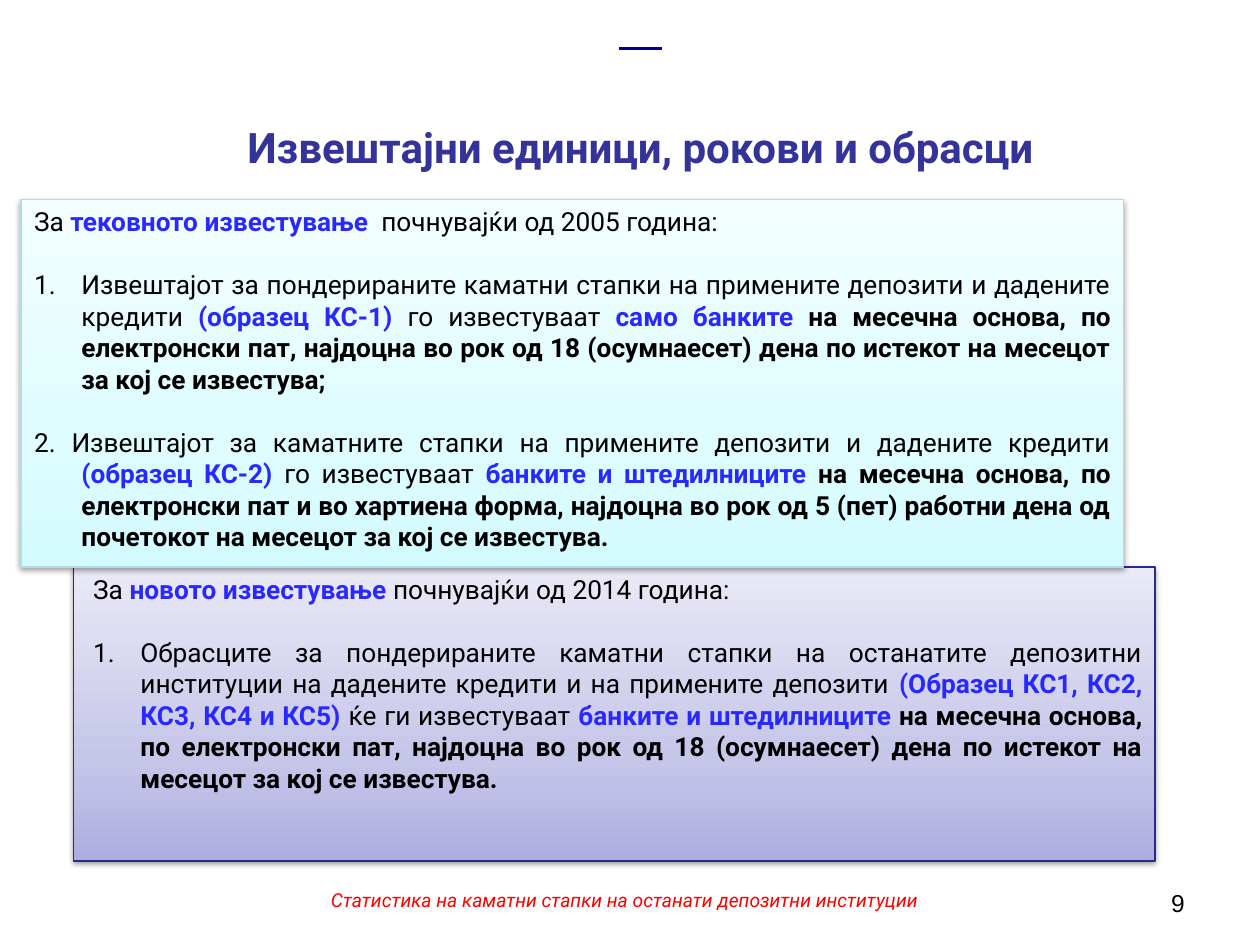
from dataclasses import dataclass
from copy import deepcopy

from lxml import etree
from pptx import Presentation
from pptx.dml.color import RGBColor
from pptx.enum.shapes import MSO_CONNECTOR, MSO_SHAPE
from pptx.enum.text import MSO_ANCHOR, PP_ALIGN
from pptx.oxml.ns import qn
from pptx.slide import Slide
from pptx.util import Pt

PX = 9525
RECTANGLE = MSO_SHAPE.RECTANGLE
STRAIGHT = MSO_CONNECTOR.STRAIGHT
TOP, MIDDLE = MSO_ANCHOR.TOP, MSO_ANCHOR.MIDDLE
CENTER, RIGHT, JUSTIFY = PP_ALIGN.CENTER, PP_ALIGN.RIGHT, PP_ALIGN.JUSTIFY
PLAIN, KEY, STRONG = ("000000", False), ("2929FF", True), ("000000", True)
BODY_SIZE, LINE_GAP, INDENT = 15, 18, 36

CURRENT = [
    ("", [("За ", PLAIN), ("тековното известување  ", KEY),
          ("почнувајќи од 2005 година:", PLAIN)]),
    ("number", [
        ("Извештајот за пондерираните каматни стапки на примените депозити и "
         "дадените кредити ", PLAIN),
        ("(образец КС-1) ", KEY), ("го известуваат ", PLAIN), ("само банките ", KEY),
        ("на месечна основа, по електронски пат, најдоцна во рок од 18 (осумнаесет) "
         "дена по истекот на месецот за кој се известува;", STRONG)]),
    ("hanging", [
        ("2. Извештајот за каматните стапки на примените депозити и дадените "
         "кредити ", PLAIN),
        ("(образец КС-2) ", KEY), ("го известуваат ", PLAIN),
        ("банките и штедилниците ", KEY),
        ("на месечна основа, по електронски пат и во хартиена форма, најдоцна во рок "
         "од 5 (пет) работни дена од почетокот на месецот за кој се известува.", STRONG)]),
]
UPCOMING = [
    ("", [("За ", PLAIN), ("новото известување ", KEY),
          ("почнувајќи од 2014 година:", PLAIN)]),
    ("number", [
        ("Обрасците за пондерираните каматни стапки на останатите депозитни институции "
         "на дадените кредити и на примените депозити ", PLAIN),
        ("(Образец КС1, КС2, КС3, КС4 и КС5)", KEY), (" ќе ги известуваат ", PLAIN),
        ("банките и штедилниците ", KEY),
        ("на месечна основа, по електронски пат, најдоцна во рок од 18 (осумнаесет) "
         "дена по истекот на месецот за кој се известува.", STRONG)]),
]


def rgb(value):
    return RGBColor.from_string(value)


def px(*lengths):
    return [length * PX for length in lengths]


@dataclass
class Painter:
    """Draws the elements of one slide in a shared style."""

    page: Slide
    font: str = "Roboto"

    def style(self, span, size, color, bold=False, italic=False, font=None):
        span.font.name = font or self.font
        span.font.size = Pt(size)
        span.font.bold = bold
        span.font.italic = italic
        span.font.color.rgb = rgb(color)

    def label(self, place, text, size, color, align, anchor=TOP, **look):
        frame = self.page.shapes.add_textbox(*px(*place)).text_frame
        frame.text = text
        frame.word_wrap = True
        frame.vertical_anchor = anchor
        para = frame.paragraphs[0]
        para.alignment = align
        self.style(para.runs[0], size, color, **look)

    def rule(self, start, end, color, width):
        line = self.page.shapes.add_connector(STRAIGHT, *px(*start, *end))
        line.line.color.rgb = rgb(color)
        line.line.width = Pt(width)
        etree.SubElement(line._element.spPr, qn("a:effectLst"))

    def gradient(self, box, colors):
        box.fill.gradient()
        box.fill.gradient_angle = 90
        stop_list = next(box._element.spPr.iter(qn("a:gsLst")))
        stop_list.append(deepcopy(stop_list[-1]))
        for stop, position, color in zip(box.fill.gradient_stops, (0, 0.35, 1), colors):
            stop.position = position
            stop.color.rgb = rgb(color)

    def shadow(self, box):
        box.shadow.inherit = False
        effects = box._element.spPr.find(qn("a:effectLst"))
        outer = etree.SubElement(effects, qn("a:outerShdw"), blurRad=str(Pt(3.1)),
                                 dist=str(Pt(1.6)), dir="5400000", rotWithShape="0")
        black = etree.SubElement(outer, qn("a:srgbClr"), val="000000")
        etree.SubElement(black, qn("a:alpha"), val="38000")

    def panel(self, place, colors, border, paragraphs, left_inset=10):
        box = self.page.shapes.add_shape(RECTANGLE, *px(*place))
        self.gradient(box, colors)
        box.line.color.rgb = rgb(border)
        box.line.width = Pt(0.75)
        self.shadow(box)
        frame = box.text_frame
        frame.word_wrap = True
        frame.vertical_anchor = TOP
        frame.margin_left = left_inset * PX
        for index, (kind, spans) in enumerate(paragraphs):
            para = frame.add_paragraph() if index else frame.paragraphs[0]
            self.paragraph(para, kind, spans)
            if index:
                para.space_before = Pt(LINE_GAP)

    def paragraph(self, para, kind, spans):
        properties = para._p.get_or_add_pPr()
        if kind:
            properties.set("marL", str(INDENT * PX))
            properties.set("indent", str(-INDENT * PX))
        if kind == "number":
            etree.SubElement(properties, qn("a:buAutoNum"), type="arabicPeriod")
        para.alignment = JUSTIFY
        for text, (color, bold) in spans:
            span = para.add_run()
            span.text = text
            self.style(span, BODY_SIZE, color, bold)


def main():
    deck = Presentation()
    deck.slide_width, deck.slide_height = px(960, 720)
    painter = Painter(deck.slides.add_slide(deck.slide_layouts[6]))
    painter.rule((472, 37), (504, 37), "000099", 1.25)
    painter.label((16, 88, 944, 48), "Извештајни единици, рокови и обрасци",
                  24, "333399", CENTER, MIDDLE, bold=True)
    painter.label((688, 672, 224, 34), "9", 14, "000000", RIGHT, font="Arial")
    painter.label((80, 672, 792, 34),
                  "Статистика на каматни стапки на останати депозитни институции",
                  11, "FF0000", CENTER, italic=True)
    painter.panel((56, 432, 824, 224), ("ADADE1", "C6C6E9", "E9E9F7"), "2A2A89",
                  UPCOMING, left_inset=15)
    painter.panel((16, 152, 840, 280), ("D3FBFF", "DFFCFF", "F2FEFF"), "B6DCDF", CURRENT)
    deck.save("out.pptx")


if __name__ == "__main__":
    main()
